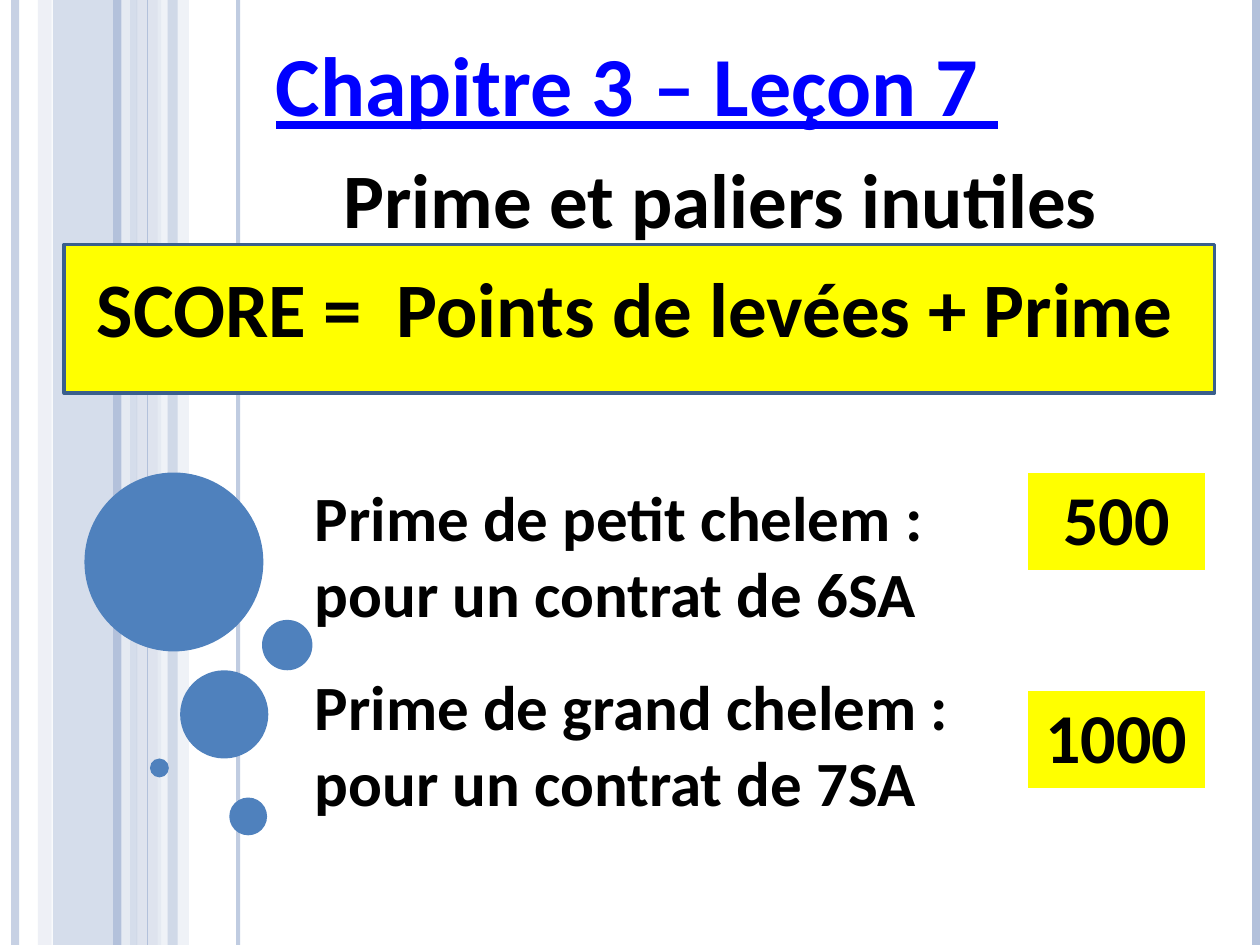
from typing import NamedTuple, Optional

from lxml import etree
from pptx import Presentation
from pptx.dml.color import RGBColor
from pptx.enum.shapes import MSO_CONNECTOR, MSO_SHAPE
from pptx.enum.text import MSO_ANCHOR, MSO_AUTO_SIZE, PP_ALIGN
from pptx.oxml.ns import qn
from pptx.util import Inches, Pt

RECTANGLE, ELLIPSE = MSO_SHAPE.RECTANGLE, MSO_SHAPE.OVAL
STRAIGHT = MSO_CONNECTOR.STRAIGHT
TOP = MSO_ANCHOR.TOP
LEFT, CENTER = PP_ALIGN.LEFT, PP_ALIGN.CENTER
NO_AUTOSIZE = MSO_AUTO_SIZE.NONE

BLACK = RGBColor(0x00, 0x00, 0x00)
WHITE = RGBColor(0xFF, 0xFF, 0xFF)
YELLOW = RGBColor(0xFF, 0xFF, 0x00)
TITLE_BLUE = RGBColor(0x00, 0x00, 0xFF)
BUBBLE_BLUE = RGBColor(0x4F, 0x81, 0xBD)
BORDER_BLUE = RGBColor(0x3A, 0x5F, 0x8C)
MEDIUM_BLUE = RGBColor(0xB3, 0xC1, 0xDB)
LIGHT_BLUE = RGBColor(0xD0, 0xD8, 0xE8)
PALE_BLUE = RGBColor(0xE9, 0xED, 0xF4)

FONT = "Calibri"
WIDTH, HEIGHT = 10, 7.5


class Band(NamedTuple):
    left: float
    width: float
    color: RGBColor
    opacity: int


class Stripe(NamedTuple):
    x: float
    points: float
    color: RGBColor
    opacity: int = 100


class Bubble(NamedTuple):
    left: float
    top: float
    diameter: float


class Bonus(NamedTuple):
    label: str
    value: str
    label_top: float
    value_top: float


BANDS = [
    Band(0.42, 0.67, MEDIUM_BLUE, 54),
    Band(0.3, 0.11, LIGHT_BLUE, 36),
    Band(1.08, 0.2, LIGHT_BLUE, 70),
    Band(1.25, 0.25, PALE_BLUE, 71),
]
STRIPES = [
    Stripe(0.12, 4.5, MEDIUM_BLUE, 73),
    Stripe(1, 4.5, PALE_BLUE, 83),
    Stripe(0.93, 4.5, MEDIUM_BLUE),
    Stripe(1.89, 2.25, MEDIUM_BLUE, 82),
    Stripe(1.17, 0.75, MEDIUM_BLUE),
    Stripe(9.97, 4.5, MEDIUM_BLUE),
]
FRONT_BAND = Band(1.33, 0.08, MEDIUM_BLUE, 51)
BUBBLES = [
    Bubble(0.67, 3.75, 1.42),
    Bubble(1.43, 5.32, 0.7),
    Bubble(1.19, 6.02, 0.15),
    Bubble(1.82, 6.33, 0.3),
    Bubble(2.08, 4.92, 0.4),
]
BONUSES = [
    Bonus("Prime de petit chelem : pour un contrat de 6SA", "500", 3.75, 3.75),
    Bonus("Prime de grand chelem : pour un contrat de 7SA", "1000", 5.25, 5.48),
]


def set_opacity(element, percent: int) -> None:
    color = next(element.iter(qn("a:srgbClr")))
    etree.SubElement(color, qn("a:alpha")).set("val", str(percent * 1000))


def add_filled_shape(slide, kind, left: float, top: float, width: float,
                     height: float, color: RGBColor):
    shape = slide.shapes.add_shape(
        kind, Inches(left), Inches(top), Inches(width), Inches(height))
    shape.shadow.inherit = False
    shape.fill.solid()
    shape.fill.fore_color.rgb = color
    shape.line.fill.background()
    return shape


def add_band(slide, band: Band) -> None:
    shape = add_filled_shape(
        slide, RECTANGLE, band.left, 0, band.width, HEIGHT, band.color)
    set_opacity(shape.fill._xPr, band.opacity)


def add_stripe(slide, stripe: Stripe) -> None:
    x = Inches(stripe.x)
    connector = slide.shapes.add_connector(STRAIGHT, x, 0, x, Inches(HEIGHT))
    connector.line.color.rgb = stripe.color
    connector.line.width = Pt(stripe.points)
    properties = connector._element.spPr
    if stripe.opacity < 100:
        set_opacity(properties, stripe.opacity)
    etree.SubElement(properties, qn("a:effectLst"))


def write_text(frame, text: str, *, size: float, color: RGBColor = BLACK,
               align=LEFT, underline: bool = False) -> None:
    frame.word_wrap = True
    paragraph = frame.paragraphs[0]
    paragraph.alignment = align
    paragraph.space_before = Pt(0)
    run = paragraph.add_run()
    run.text = text
    font = run.font
    font.name, font.size, font.bold = FONT, Pt(size), True
    font.underline = underline
    font.color.rgb = color


def place_text(slide, text: str, left: float, top: float, width: float,
               height: float, placeholder: Optional[int] = None,
               **text_format) -> None:
    """Write into the numbered placeholder, or into a new text box."""
    box = (Inches(left), Inches(top), Inches(width), Inches(height))
    if placeholder is None:
        shape = slide.shapes.add_textbox(*box)
    else:
        shape = slide.placeholders[placeholder]
        shape.left, shape.top, shape.width, shape.height = box
    shape.text_frame.auto_size = NO_AUTOSIZE
    shape.text_frame.vertical_anchor = TOP
    write_text(shape.text_frame, text, **text_format)


def set_cell_borders(cell, color: RGBColor, points: float) -> None:
    properties = cell._tc.get_or_add_tcPr()
    for index, side in enumerate(("a:lnL", "a:lnR", "a:lnT", "a:lnB")):
        line = etree.Element(qn(side), w=str(Pt(points)))
        fill = etree.SubElement(line, qn("a:solidFill"))
        etree.SubElement(fill, qn("a:srgbClr"), val=str(color))
        properties.insert(index, line)


def add_bonus(slide, bonus: Bonus) -> None:
    table = slide.shapes.add_table(
        1, 1, Inches(8.15), Inches(bonus.value_top), Inches(1.42),
        Inches(0.77)).table
    cell = table.cell(0, 0)
    cell.fill.solid()
    cell.fill.fore_color.rgb = YELLOW
    set_cell_borders(cell, WHITE, 1)
    write_text(cell.text_frame, bonus.value, size=40, align=CENTER)
    place_text(slide, bonus.label, 2.4, bonus.label_top, 5.43, 1.31, size=36)


def main() -> None:
    presentation = Presentation()
    presentation.slide_width = Inches(WIDTH)
    presentation.slide_height = Inches(HEIGHT)
    slide = presentation.slides.add_slide(presentation.slide_layouts[0])

    for band in BANDS:
        add_band(slide, band)
    for stripe in STRIPES:
        add_stripe(slide, stripe)
    add_band(slide, FRONT_BAND)
    for left, top, diameter in BUBBLES:
        add_filled_shape(
            slide, ELLIPSE, left, top, diameter, diameter, BUBBLE_BLUE)

    score_panel = add_filled_shape(
        slide, RECTANGLE, 0.51, 1.94, 9.13, 1.18, YELLOW)
    score_panel.line.color.rgb = BORDER_BLUE
    score_panel.line.width = Pt(2)

    place_text(slide, "Chapitre 3 – Leçon 7 ", 2.09, 0.21, 7.48, 0.91,
               placeholder=0, size=48, color=TITLE_BLUE, underline=True)
    place_text(slide, "Prime et paliers inutiles ", 2.09, 1.15, 7.4, 0.84,
               placeholder=1, size=44, align=CENTER)
    place_text(slide, "SCORE =  Points de levées + Prime", 0.67, 2.02, 9.06,
               0.84, size=44)
    for bonus in BONUSES:
        add_bonus(slide, bonus)

    presentation.save("out.pptx")


if __name__ == "__main__":
    main()
